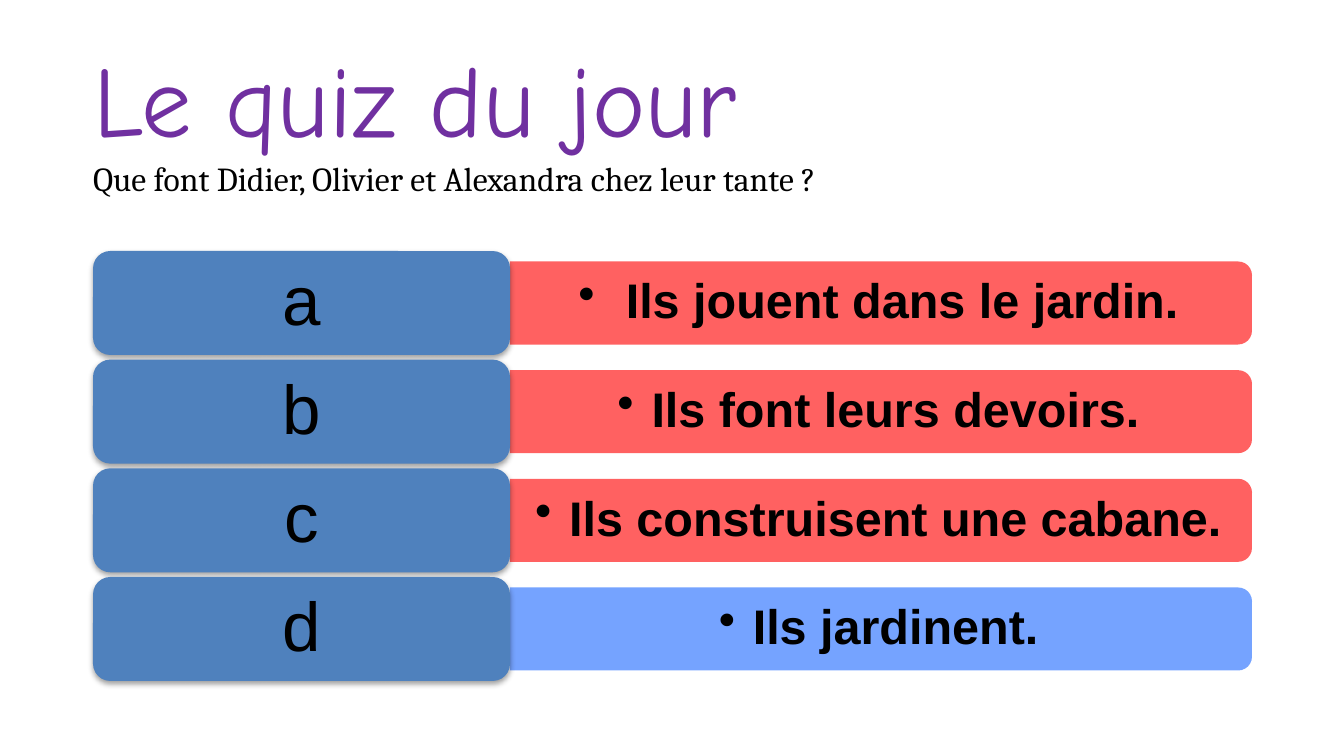
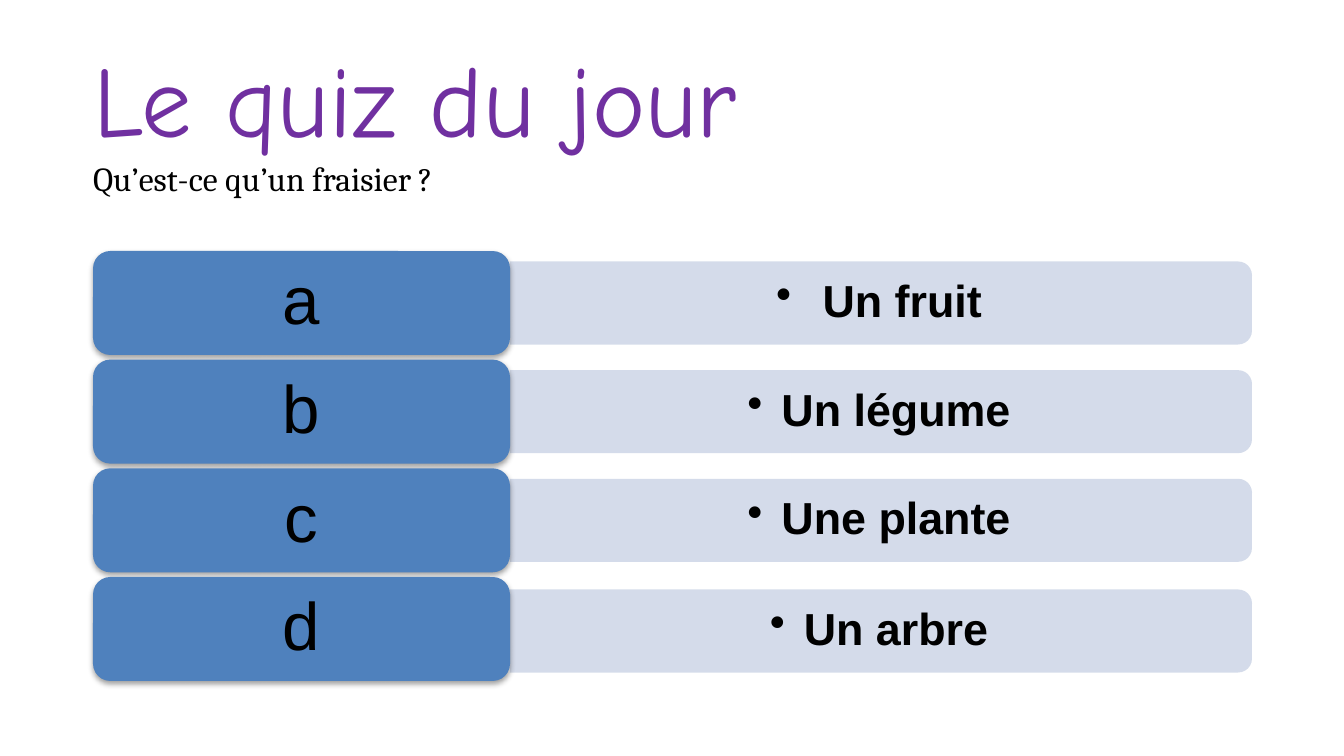
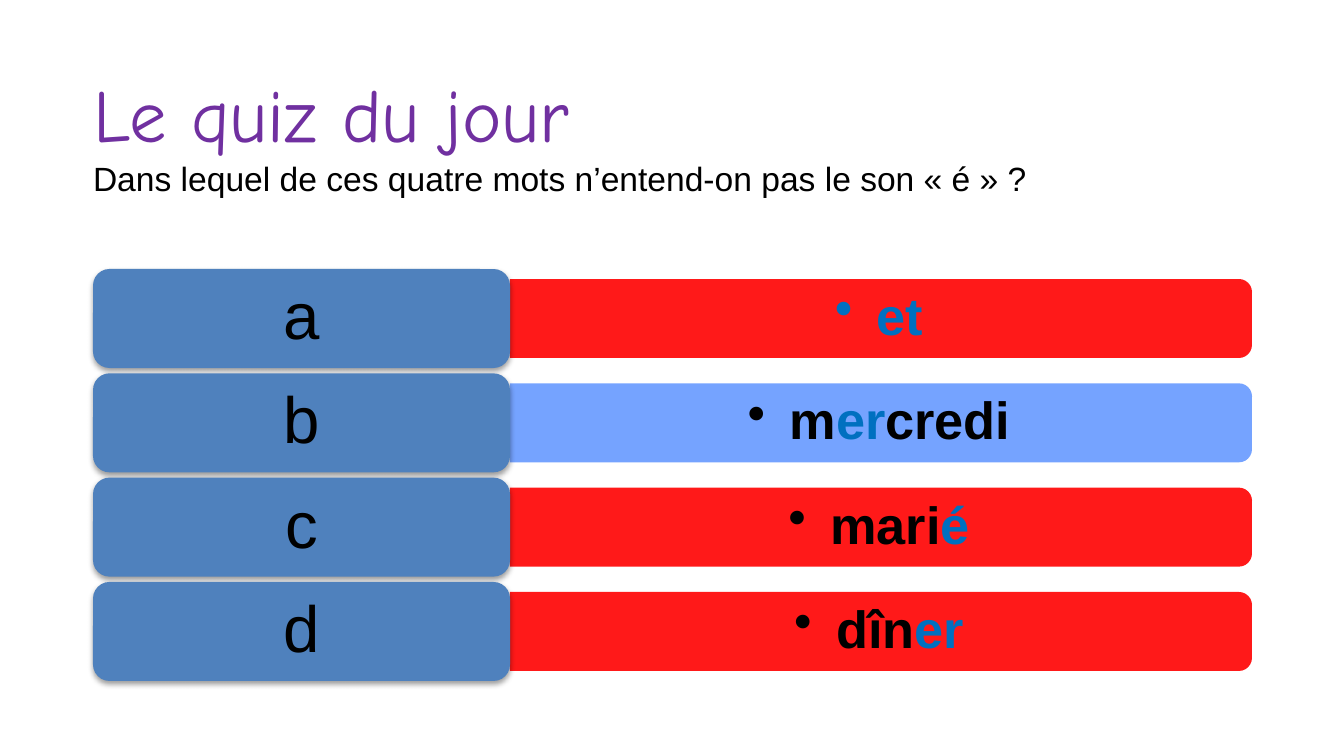
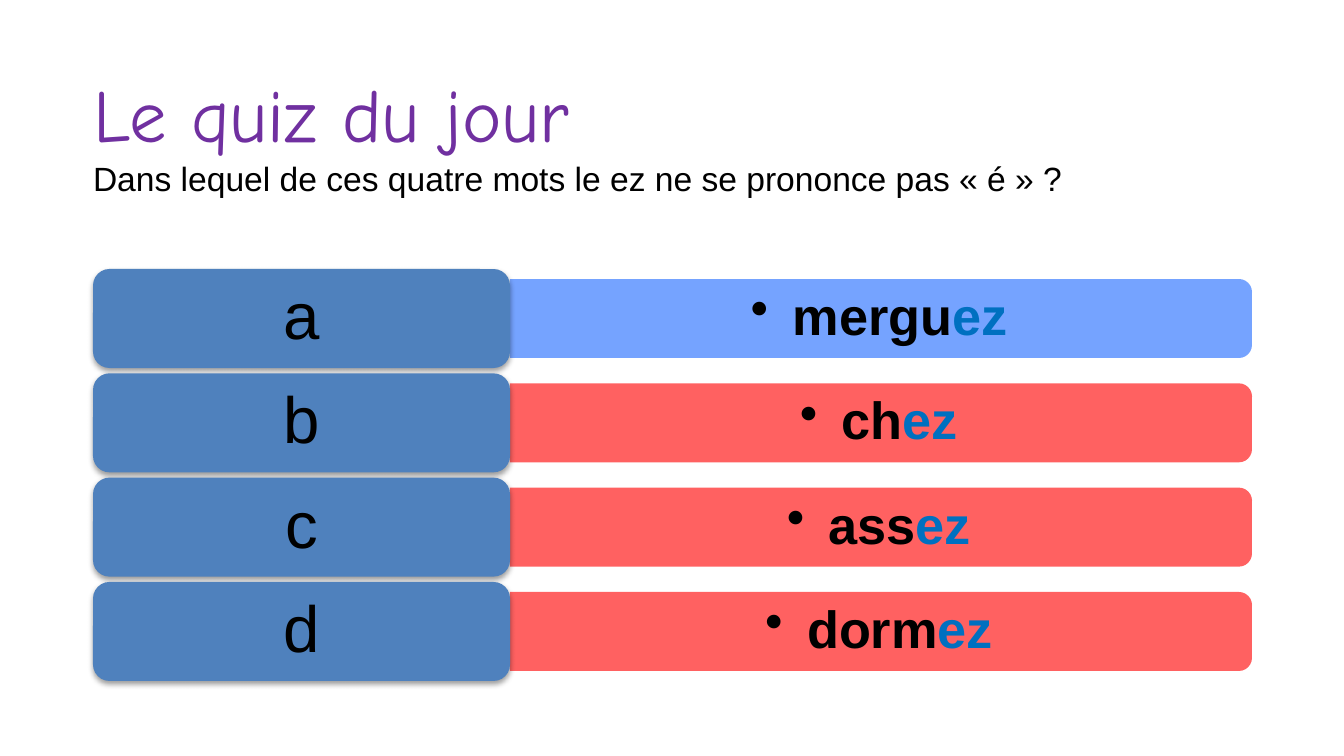
from dataclasses import dataclass

from pptx import Presentation
from pptx.dml.color import RGBColor
from pptx.enum.shapes import MSO_SHAPE
from pptx.enum.text import MSO_ANCHOR, PP_ALIGN
from pptx.oxml.ns import qn
from pptx.util import Emu, Pt
from lxml.etree import SubElement


@dataclass(frozen=True)
class Theme:
    purple: str = "7030A0"
    ink: str = "000000"
    highlight: str = "0070C0"
    label: str = "4F81BD"
    right: str = "6699FF"
    wrong: str = "FF5050"
    vivid_wrong: str = "FF0000"
    neutral: str = "D0D8E8"
    title_font: str = "Comic Neue"
    serif: str = "Cambria"
    sans: str = "Arial"
    question_size: int = 18


theme = Theme()


def px(length):
    return Emu(round(length * 914400 / 134.4))


def write(frame, inset, runs, align, spacing):
    frame_format = {
        "word_wrap": True,
        "vertical_anchor": MSO_ANCHOR.MIDDLE,
        "margin_left": px(inset[0]),
        "margin_right": px(inset[0]),
        "margin_top": px(inset[1]),
        "margin_bottom": px(inset[1]),
    }
    for attribute, value in frame_format.items():
        setattr(frame, attribute, value)
    paragraph = frame.paragraphs[0]
    paragraph.alignment = align
    paragraph.line_spacing = spacing
    for position, (text, color, font_format) in enumerate(runs):
        if position and align == PP_ALIGN.LEFT:
            paragraph.add_line_break()
        run = paragraph.add_run()
        run.text = text
        run.font.color.rgb = RGBColor.from_string(color)
        for attribute, value in font_format.items():
            setattr(run.font, attribute, value)
    return paragraph


left, label_width, bar_left, bar_length = 93, 417, 510, 742

tall_rows = {
    "title_height": 181, "title_size": 54, "question_font": theme.serif,
    "first_top": 251, "last_top": 577, "label_height": 104, "bar_height": 83,
    "label_size": 37, "answer_size": 26, "answer_inset": (15, 7), "indent": 34,
    "last_bar_shift": 0,
}
plain_rows = tall_rows | {
    "label_size": 36, "answer_size": 24, "answer_inset": (36, 19), "last_bar_shift": 2,
}
short_rows = tall_rows | {
    "title_height": 212, "title_size": 40, "question_font": theme.sans,
    "first_top": 269, "last_top": 582, "label_height": 99, "bar_height": 79,
    "label_size": 35, "answer_size": 28, "answer_inset": (16, 8), "indent": 42,
}

quizzes = [
    ("Que font Didier, Olivier et Alexandra chez leur tante ?", tall_rows, [
        (" Ils jouent dans le jardin.", theme.wrong),
        ("Ils font leurs devoirs.", theme.wrong),
        ("Ils construisent une cabane.", theme.wrong),
        ("Ils jardinent.", theme.right),
    ]),
    ("Qu’est-ce qu’un fraisier ?", plain_rows, [
        (" Un fruit", theme.neutral),
        ("Un légume", theme.neutral),
        ("Une plante", theme.neutral),
        ("Un arbre", theme.neutral),
    ]),
    ("Dans lequel de ces quatre mots n’entend-on pas le son « é » ?", short_rows, [
        ("|et", theme.vivid_wrong),
        ("m|er|credi", theme.right),
        ("mari|é", theme.vivid_wrong),
        ("dîn|er", theme.vivid_wrong),
    ]),
    ("Dans lequel de ces quatre mots le ez ne se prononce pas « é » ?", short_rows, [
        ("mergu|ez", theme.right),
        ("ch|ez", theme.wrong),
        ("ass|ez", theme.wrong),
        ("dorm|ez", theme.wrong),
    ]),
]

deck = Presentation()
deck.slide_width, deck.slide_height = px(1344), px(756)

for question, style, answers in quizzes:
    slide = deck.slides.add_slide(deck.slide_layouts[6])
    heading = slide.shapes.add_textbox(px(left), px(27), px(1158), px(style["title_height"]))
    write(heading.text_frame, (0, 0), [
        ("Le quiz du jour", theme.purple,
         {"name": theme.title_font, "size": Pt(style["title_size"])}),
        (question, theme.ink,
         {"name": style["question_font"], "size": Pt(theme.question_size)}),
    ], PP_ALIGN.LEFT, 1.0)

    label_height, bar_height = style["label_height"], style["bar_height"]
    pitch = (style["last_top"] - style["first_top"]) / (len(answers) - 1)
    for row, (letter, (answer, bar_color)) in enumerate(zip("abcd", answers)):
        label_top = style["first_top"] + row * pitch
        bar_middle = label_top + label_height / 2
        if row == len(answers) - 1:
            bar_middle += style["last_bar_shift"]

        bar = slide.shapes.add_shape(
            MSO_SHAPE.ROUND_2_SAME_RECTANGLE,
            px(bar_left + (bar_length - bar_height) / 2), px(bar_middle - bar_length / 2),
            px(bar_height), px(bar_length))
        bar.rotation = 90
        label = slide.shapes.add_shape(
            MSO_SHAPE.ROUNDED_RECTANGLE,
            px(left), px(label_top), px(label_width), px(label_height))
        for part, color in ((bar, bar_color), (label, theme.label)):
            part.shadow.inherit = False
            part.fill.solid()
            part.fill.fore_color.rgb = RGBColor.from_string(color)
            part.line.fill.background()

        bar_rgb = bar.fill._xPr.find(qn("a:solidFill")).find(qn("a:srgbClr"))
        SubElement(bar_rgb, qn("a:alpha"), val="90000")
        shadow = SubElement(
            label._element.spPr.find(qn("a:effectLst")), qn("a:outerShdw"),
            blurRad=str(Pt(3.1)), dist=str(Pt(1.6)), dir="5400000", rotWithShape="0")
        shadow_rgb = SubElement(shadow, qn("a:srgbClr"), val=theme.ink)
        SubElement(shadow_rgb, qn("a:alpha"), val="38000")

        write(label.text_frame, (25, 15), [
            (letter, theme.ink, {"name": theme.sans, "size": Pt(style["label_size"])}),
        ], PP_ALIGN.CENTER, 0.9)

        answer_format = {"name": theme.sans, "size": Pt(style["answer_size"]), "bold": True}
        answer_runs = [
            (text, theme.highlight if position % 2 else theme.ink, answer_format)
            for position, text in enumerate(answer.split("|")) if text
        ]
        answer_area = slide.shapes.add_textbox(
            px(bar_left), px(bar_middle - bar_height / 2 + 4), px(738), px(bar_height - 8))
        line = write(answer_area.text_frame, style["answer_inset"], answer_runs,
                     PP_ALIGN.CENTER, 0.9)
        line.level = 1
        properties = line._p.get_or_add_pPr()
        properties.set("marL", str(px(style["indent"])))
        properties.set("indent", str(-px(style["indent"])))
        SubElement(properties, qn("a:buChar"), char="•")

deck.save("out.pptx")
